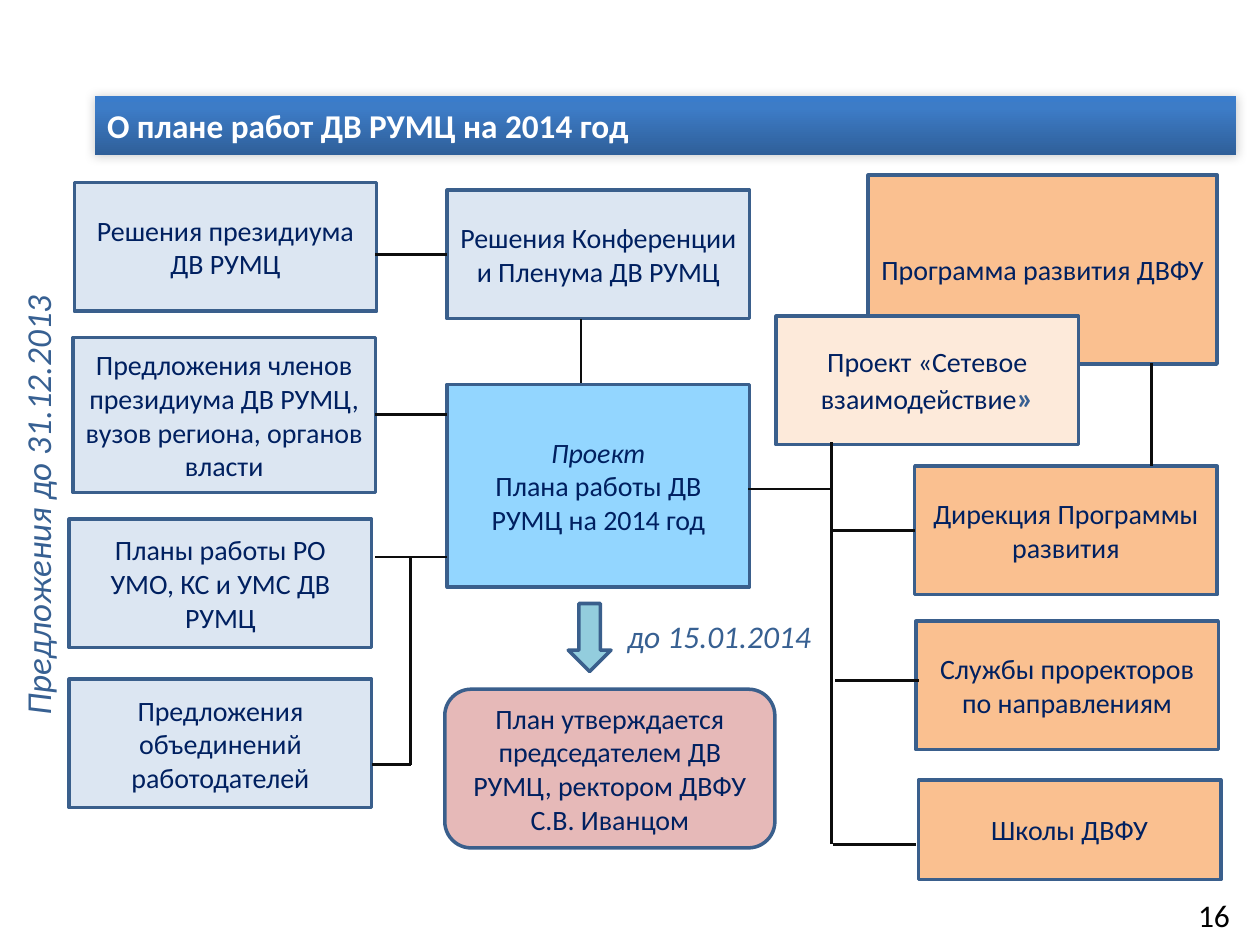
"""Builds the slide on the 2014 work plan as a flow diagram."""
import copy

import pptx
import pptx.dml.color
import pptx.enum.shapes
import pptx.enum.text
import pptx.oxml
import pptx.oxml.ns
import pptx.oxml.xmlchemy
import pptx.util
from pptx.util import Inches

RGBColor = pptx.dml.color.RGBColor
Shape = pptx.enum.shapes.MSO_SHAPE
Align = pptx.enum.text.PP_ALIGN
Anchor = pptx.enum.text.MSO_ANCHOR

WHITE = RGBColor(0xFF, 0xFF, 0xFF)
BLACK = RGBColor(0x00, 0x00, 0x00)
NAVY = RGBColor(0x00, 0x20, 0x60)
STEEL = RGBColor(0x37, 0x60, 0x92)
OUTLINE = RGBColor(0x3A, 0x5F, 0x8C)
LINK = RGBColor(0x0D, 0x0D, 0x0D)
PALE_BLUE = RGBColor(0xDC, 0xE6, 0xF2)
SKY = RGBColor(0x93, 0xD6, 0xFF)
ORANGE = RGBColor(0xFA, 0xC0, 0x90)
PEACH = RGBColor(0xFD, 0xEA, 0xDA)
ROSE = RGBColor(0xE6, 0xB9, 0xB8)
TEAL = RGBColor(0x93, 0xCD, 0xDD)
BANNER = ((0, RGBColor(0x2F, 0x5F, 0x99)), (0.8, RGBColor(0x3D, 0x7C, 0xC7)),
          (1, RGBColor(0x3A, 0x7C, 0xCB)))
BANNER_SHADOW = (
    f'<a:effectLst {pptx.oxml.ns.nsdecls("a")}>'
    '<a:outerShdw blurRad="76200" dist="0" dir="18900000"><a:srgbClr val="000000">'
    '<a:alpha val="20000"/></a:srgbClr></a:outerShdw></a:effectLst>')


class Diagram:
    """Holds the style and the current slide."""

    font_name = "Calibri"

    def __init__(self, slide):
        self.slide = slide

    def style(self, font, size, color, bold=False, italic=False):
        font.name = self.font_name
        font.size = pptx.util.Pt(size)
        font.color.rgb = color
        font.bold = bold
        font.italic = italic

    def title(self, text, left, top, width, height):
        banner = self.slide.shapes.title
        banner.left, banner.top = Inches(left), Inches(top)
        banner.width, banner.height = Inches(width), Inches(height)
        banner.fill.gradient()
        banner.fill.gradient_angle = 90
        stop_list = banner.element.spPr.find(".//" + pptx.oxml.ns.qn("a:gsLst"))
        stop_list.append(copy.deepcopy(stop_list[-1]))
        for stop, (position, color) in zip(banner.fill.gradient_stops, BANNER):
            stop.position = position
            stop.color.rgb = color
        banner.element.spPr.append(pptx.oxml.parse_xml(BANNER_SHADOW))
        frame = banner.text_frame
        frame.text = text
        frame.auto_size = pptx.enum.text.MSO_AUTO_SIZE.NONE
        frame.vertical_anchor = Anchor.MIDDLE
        frame.paragraphs[0].alignment = Align.LEFT
        self.style(frame.paragraphs[0].font, 19, WHITE, bold=True)

    def box(self, text, left, top, width, height, color, kind=Shape.RECTANGLE):
        box = self.slide.shapes.add_shape(
            kind, Inches(left), Inches(top), Inches(width), Inches(height))
        box.shadow.inherit = False
        box.fill.solid()
        box.fill.fore_color.rgb = color
        box.line.color.rgb = OUTLINE
        box.line.width = pptx.util.Pt(2)
        frame = box.text_frame
        frame.word_wrap = True
        frame.vertical_anchor = Anchor.MIDDLE
        frame.text = text
        for paragraph in frame.paragraphs:
            paragraph.alignment = Align.CENTER
            self.style(paragraph.font, 16, NAVY)
        return box

    def label(self, text, left, top, width, height, size, color,
              align=Align.CENTER, italic=True, rotation=0):
        label = self.slide.shapes.add_textbox(
            Inches(left), Inches(top), Inches(width), Inches(height))
        label.rotation = rotation
        label.text_frame.word_wrap = True
        label.text_frame.text = text
        paragraph = label.text_frame.paragraphs[0]
        paragraph.alignment = align
        self.style(paragraph.font, size, color, italic=italic)

    def link(self, x1, y1, x2, y2):
        link = self.slide.shapes.add_connector(
            pptx.enum.shapes.MSO_CONNECTOR.STRAIGHT,
            Inches(x1), Inches(y1), Inches(x2), Inches(y2))
        link.line.color.rgb = LINK
        link.line.width = pptx.util.Pt(1.5)
        link._element.spPr.append(pptx.oxml.xmlchemy.OxmlElement("a:effectLst"))


def main():
    deck = pptx.Presentation()
    deck.slide_width, deck.slide_height = Inches(10), Inches(7.5)
    diagram = Diagram(deck.slides.add_slide(deck.slide_layouts[5]))

    diagram.label("16", 9.41, 7.06, 0.51, 0.4, 18, BLACK, Align.LEFT, italic=False)
    diagram.title("О плане работ ДВ РУМЦ на 2014 год", 0.75, 0.76, 9.06, 0.47)

    box_width, box_height = 2.4, 1.02
    for text, left, top, height, color in (
        ("Решения президиума ДВ РУМЦ", 0.59, 1.45, box_height, PALE_BLUE),
        ("Предложения членов президиума ДВ РУМЦ, вузов региона, органов власти",
         0.58, 2.68, 1.23, PALE_BLUE),
        ("Планы работы РО УМО, КС и УМС ДВ РУМЦ", 0.55, 4.12, box_height, PALE_BLUE),
        ("Предложения объединений работодателей", 0.55, 5.39, box_height, PALE_BLUE),
        ("Решения Конференции и Пленума ДВ РУМЦ", 3.55, 1.51, box_height, PALE_BLUE),
        ("Дирекция Программы развития", 7.26, 3.7, box_height, ORANGE),
        ("Службы проректоров по направлениям", 7.27, 4.93, box_height, ORANGE),
        ("Школы ДВФУ", 7.29, 6.19, 0.79, ORANGE),
    ):
        diagram.box(text, left, top, box_width, height, color)

    draft_plan = diagram.box("Проект\nПлана работы ДВ РУМЦ на 2014 год",
                             3.55, 3.05, box_width, 1.61, SKY)
    draft_plan.text_frame.paragraphs[0].font.italic = True

    diagram.box("Программа развития ДВФУ", 6.89, 1.39, 2.77, 1.5, ORANGE)
    network_project = diagram.box("Проект «Сетевое взаимодействие",
                                  6.16, 2.51, box_width, box_height, PEACH)
    closing_quote = network_project.text_frame.paragraphs[0].add_run()
    closing_quote.text = "»"
    diagram.style(closing_quote.font, 18, STEEL, bold=True)

    plan_left, inputs_right, inputs_trunk, units_trunk = 3.55, 2.98, 3.26, 6.6
    for y in (2.02, 3.29, 4.42):
        diagram.link(inputs_right, y, plan_left, y)
    diagram.link(inputs_trunk, 4.43, inputs_trunk, 6.07)
    diagram.link(inputs_trunk, 6.07, 2.95, 6.07)
    diagram.link(4.61, 2.53, 4.61, 3.04)
    diagram.link(units_trunk, 3.51, units_trunk, 6.7)
    diagram.link(units_trunk, 3.88, 5.94, 3.88)
    for unit_left, y, trunk in ((7.26, 4.21, 6.6), (7.29, 5.4, 6.63), (7.27, 6.7, 6.61)):
        diagram.link(unit_left, y, trunk, y)
    diagram.link(9.14, 2.88, 9.14, 3.7)

    diagram.label("до 15.01.2014", 4.51, 4.85, 2.4, 0.4, 18, STEEL)
    diagram.label("Предложения до 31.12.2013", -2.2, 3.79, 5, 0.44, 20, STEEL, rotation=270)
    diagram.box("План утверждается председателем ДВ РУМЦ, ректором ДВФУ С.В. Иванцом",
                3.53, 5.47, 2.62, 1.26, ROSE, Shape.ROUNDED_RECTANGLE)
    diagram.box("", 4.51, 4.79, 0.34, 0.54, TEAL, Shape.DOWN_ARROW)

    deck.save("out.pptx")


if __name__ == "__main__":
    main()
